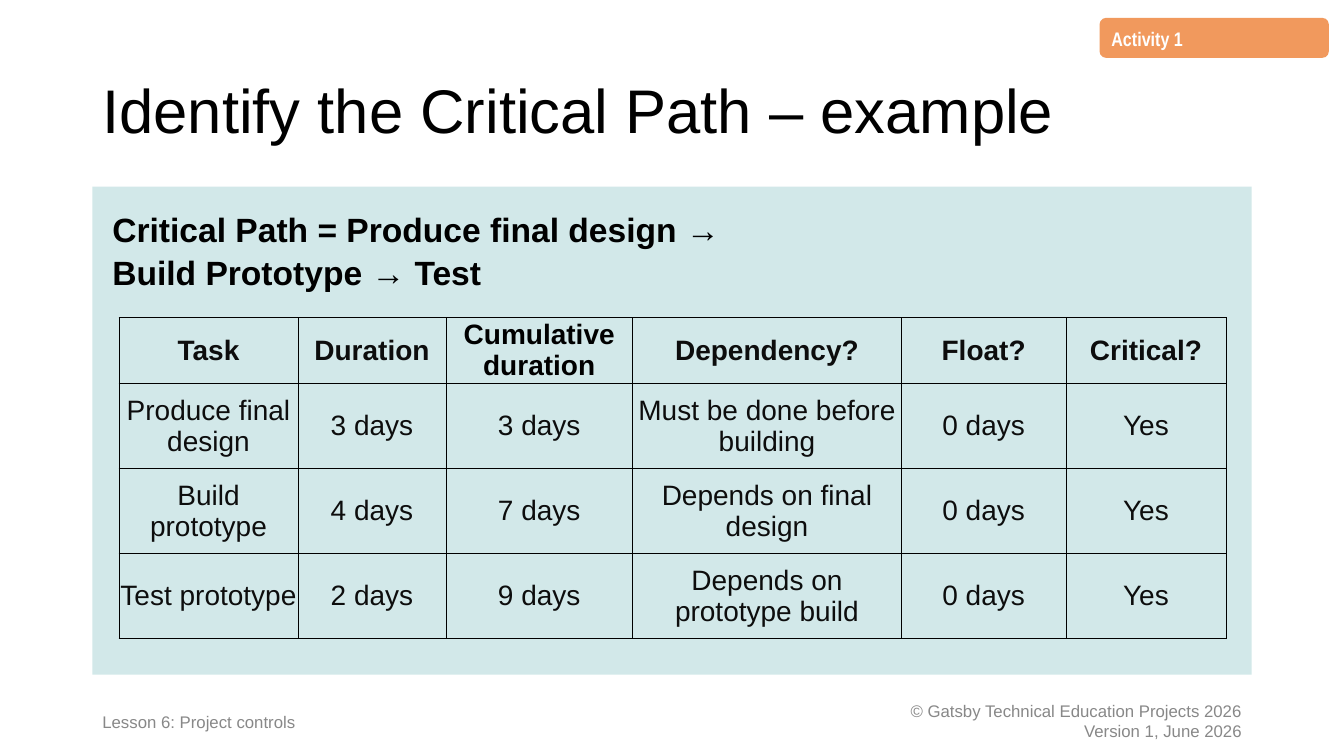
"""Build the critical path example slide."""
from lxml.etree import SubElement
from pptx import Presentation
from pptx.dml.color import RGBColor
from pptx.enum.shapes import MSO_SHAPE as Preset
from pptx.enum.text import MSO_ANCHOR as Anchor, MSO_AUTO_SIZE as AutoSize, PP_ALIGN as Align
from pptx.oxml.ns import qn
from pptx.util import Cm, Pt

BLACK = RGBColor(0x00, 0x00, 0x00)
INK = RGBColor(0x0D, 0x0D, 0x0D)
WHITE = RGBColor(0xFF, 0xFF, 0xFF)
GREY = RGBColor(0x88, 0x88, 0x88)
PANEL = RGBColor(0xD2, 0xE8, 0xE9)
ORANGE = RGBColor(0xF1, 0x99, 0x5D)

TASKS = [
    ["Task", "Duration", "Cumulative duration", "Dependency?", "Float?", "Critical?"],
    ["Produce final design", "3 days", "3 days", "Must be done before building", "0 days", "Yes"],
    ["Build prototype", "4 days", "7 days", "Depends on final design", "0 days", "Yes"],
    ["Test prototype", "2 days", "9 days", "Depends on prototype build", "0 days", "Yes"],
]
COLUMN_WIDTHS = [4.51, 3.73, 4.7, 6.78, 4.14, 4.04]
ROW_HEIGHTS = [1.67, 2.14, 2.14, 2.14]


class SlideBuilder:
    """Hold the text style and the current slide."""

    def __init__(self, presentation, font="Arial"):
        self.font = font
        self.slide = presentation.slides.add_slide(presentation.slide_layouts[1])

    def format_paragraph(self, paragraph, size, color, bold=False, align=Align.LEFT,
                         spacing=1.0, font=None):
        paragraph.alignment = align
        paragraph.line_spacing = spacing
        paragraph.space_before = paragraph.space_after = Pt(0)
        paragraph.font.name = font or self.font
        paragraph.font.size = Pt(size)
        paragraph.font.bold = bold
        paragraph.font.color.rgb = color

    def fill_frame(self, shape, text, size, color, anchor=Anchor.MIDDLE,
                   margins=(0.25, 0.13), **style):
        frame = shape.text_frame
        frame.word_wrap = True
        frame.auto_size = AutoSize.NONE
        frame.vertical_anchor = anchor
        frame.margin_left = frame.margin_right = Cm(margins[0])
        frame.margin_top = frame.margin_bottom = Cm(margins[1])
        frame.text = text
        for paragraph in frame.paragraphs:
            self.format_paragraph(paragraph, size, color, **style)

    def place(self, shape, left, top, width, height):
        shape.left, shape.top = Cm(left), Cm(top)
        shape.width, shape.height = Cm(width), Cm(height)

    def title(self, text, *box):
        shape = self.slide.shapes.title
        self.place(shape, *box)
        self.fill_frame(shape, text, 44, BLACK, spacing=0.9)

    def body(self, text, *box):
        shape = self.slide.placeholders[1]
        self.place(shape, *box)
        shape.fill.solid()
        shape.fill.fore_color.rgb = PANEL
        self.fill_frame(shape, text, 24, BLACK, Anchor.TOP, (0.5, 0.5), bold=True, spacing=1.07)
        for paragraph in shape.text_frame.paragraphs:
            properties = paragraph._p.get_or_add_pPr()
            properties.set("marL", "0")
            properties.set("indent", "0")
            properties.insert_element_before(
                properties.makeelement(qn("a:buNone")), "a:tabLst", "a:defRPr", "a:extLst")

    def footer(self, text, *box, **style):
        shape = self.slide.shapes.add_textbox(*map(Cm, box))
        self.fill_frame(shape, text, 12, GREY, **style)

    def tag(self, text, *box):
        shape = self.slide.shapes.add_shape(Preset.FLOWCHART_ALTERNATE_PROCESS, *map(Cm, box))
        shape.shadow.inherit = False
        shape.fill.solid()
        shape.fill.fore_color.rgb = ORANGE
        shape.line.fill.background()
        self.fill_frame(shape, text, 14, WHITE, Anchor.TOP, bold=True, spacing=1.08,
                        font="Arial Narrow")

    def border(self, cell):
        properties = cell._tc.get_or_add_tcPr()
        for side in ("lnL", "lnR", "lnT", "lnB"):
            line = SubElement(properties, qn(f"a:{side}"), w=str(Pt(0.5)))
            fill = SubElement(line, qn("a:solidFill"))
            SubElement(fill, qn("a:srgbClr"), val=str(BLACK))

    def table(self, rows, widths, heights, left, top):
        frame = self.slide.shapes.add_table(len(rows), len(widths), Cm(left), Cm(top),
                                            Cm(sum(widths)), Cm(sum(heights)))
        table = frame.table
        table.horz_banding = False
        for column, width in zip(table.columns, widths):
            column.width = Cm(width)
        for row_index, (row, height) in enumerate(zip(table.rows, heights)):
            row.height = Cm(height)
            for cell, text in zip(row.cells, rows[row_index]):
                self.border(cell)
                cell.fill.background()
                cell.vertical_anchor = Anchor.MIDDLE
                cell.margin_left = cell.margin_right = Cm(0.02)
                cell.margin_top = cell.margin_bottom = Cm(0.02)
                cell.text = text
                color = BLACK if text == "Cumulative duration" else INK
                self.format_paragraph(cell.text_frame.paragraphs[0], 20, color,
                                      bold=row_index == 0, align=Align.CENTER)


def main():
    presentation = Presentation()
    presentation.slide_width, presentation.slide_height = Cm(33.87), Cm(19.05)
    builder = SlideBuilder(presentation)
    builder.title("Identify the Critical Path – example", 2.33, 1.01, 29.21, 3.68)
    builder.body("Critical Path = Produce final design →\vBuild Prototype → Test",
                 2.33, 4.7, 29.21, 12.3)
    builder.footer("Lesson 6: Project controls", 2.33, 17.66, 11.68, 1.01, spacing=1.08)
    builder.footer("© Gatsby Technical Education Projects 2026\nVersion 1, June 2026",
                   20.12, 17.66, 11.43, 1.01, align=Align.RIGHT)
    builder.table(TASKS, COLUMN_WIDTHS, ROW_HEIGHTS, 3, 8)
    builder.tag("Activity 1", 27.71, 0.45, 5.78, 1.01)
    presentation.save("out.pptx")


if __name__ == "__main__":
    main()
